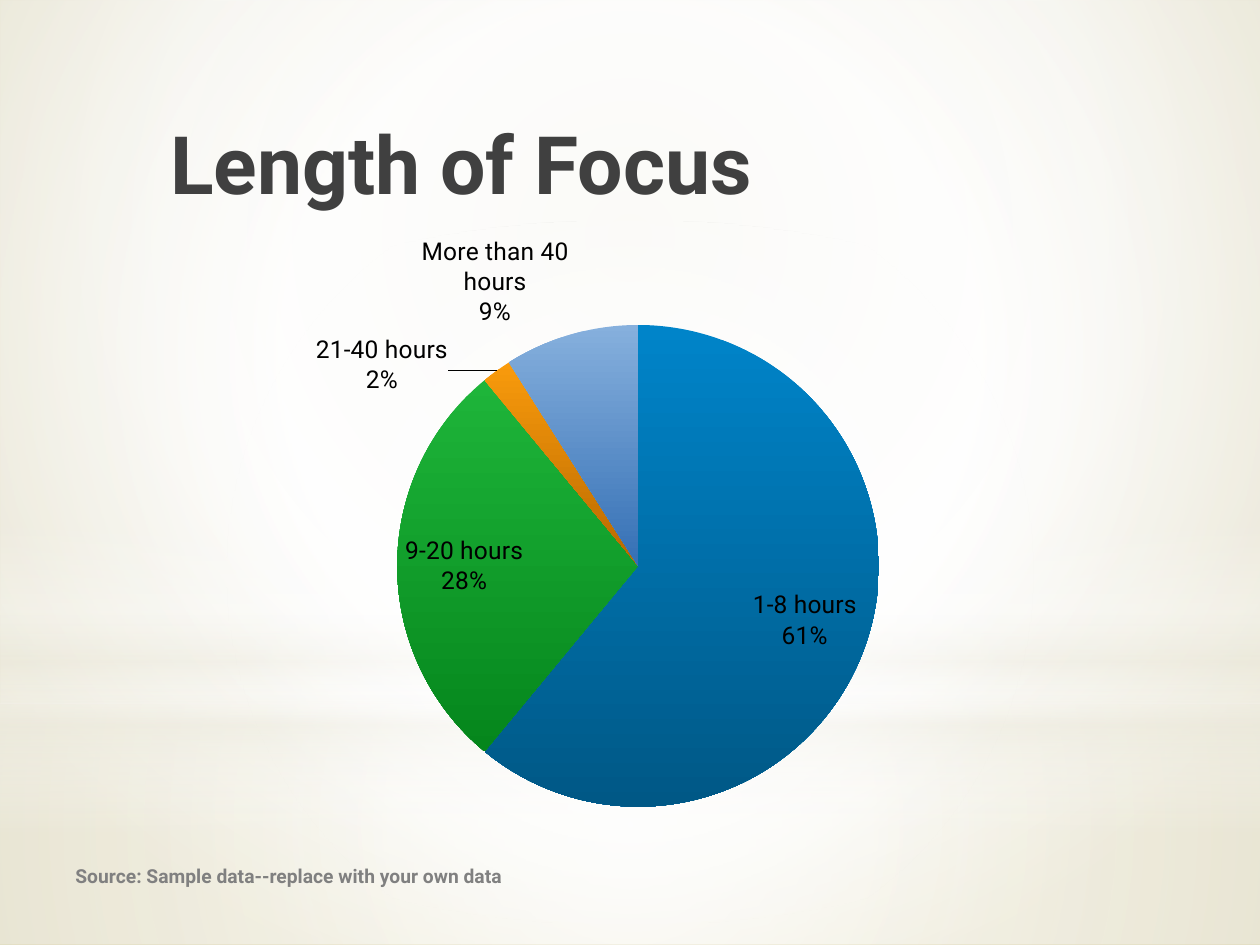
from lxml import etree
from pptx import Presentation
from pptx.chart.data import CategoryChartData
from pptx.dml.color import RGBColor
from pptx.enum.chart import XL_CHART_TYPE, XL_LABEL_POSITION
from pptx.enum.shapes import MSO_SHAPE
from pptx.enum.text import MSO_ANCHOR, PP_ALIGN
from pptx.oxml import parse_xml
from pptx.oxml.ns import nsdecls, qn
from pptx.util import Pt

PIE = XL_CHART_TYPE.PIE
BEST_FIT = XL_LABEL_POSITION.BEST_FIT
OUTSIDE_END = XL_LABEL_POSITION.OUTSIDE_END
RECTANGLE, OVAL = MSO_SHAPE.RECTANGLE, MSO_SHAPE.OVAL
TOP, MIDDLE, LEFT = MSO_ANCHOR.TOP, MSO_ANCHOR.MIDDLE, PP_ALIGN.LEFT

FONT = "Roboto"
BLACK = RGBColor(0x00, 0x00, 0x00)
CHARCOAL = RGBColor(0x40, 0x40, 0x40)
GRAY = RGBColor(0x80, 0x80, 0x80)
WHITE = RGBColor(0xFF, 0xFF, 0xFF)
CREAM = RGBColor(0xEE, 0xEC, 0xE1)
SAND = RGBColor(0xE7, 0xE4, 0xD4)
KHAKI = RGBColor(0xD5, 0xCC, 0x9F)

TITLE = "Length of Focus"
SOURCE = "Source: Sample data--replace with your own data"
SLICES = [
    ("1-8 hours", 61, RGBColor(0x00, 0x84, 0xC9), RGBColor(0x00, 0x58, 0x86)),
    ("9-20 hours", 28, RGBColor(0x1E, 0xB5, 0x3A), RGBColor(0x05, 0x86, 0x1C)),
    ("21-40 hours", 2, RGBColor(0xF9, 0x9B, 0x0C), RGBColor(0xB8, 0x68, 0x00)),
    ("More than 40 hours", 9, RGBColor(0x86, 0xB0, 0xDD), RGBColor(0x35, 0x70, 0xB5)),
]
MOVED_SLICE = 2
LABEL_SHIFT = {"x": -0.05, "y": 0.05}
PLOT_AREA = {"x": 0.27, "y": 0.18, "w": 0.55, "h": 0.79}

CENTER = (50, 50, 50, 50)
BACKDROP = ([(0, SAND, 100), (60, WHITE, 100), (100, KHAKI, 100)], (20, 10, 20, 60))
GLOWS = [
    (RECTANGLE, (0, 402, 720, 138),
     [(0, WHITE, 91), (37, WHITE, 76), (100, CREAM, 79)], CENTER),
    (RECTANGLE, (0, 0, 720, 402),
     [(0, WHITE, 83), (48, WHITE, 83), (100, CREAM, 83)], CENTER),
    (RECTANGLE, (0, 297, 720, 180),
     [(0, WHITE, 0), (29, WHITE, 30), (45, CREAM, 40),
      (55, WHITE, 26), (65, CREAM, 60), (100, WHITE, 0)], None),
    (OVAL, (0, 126, 720, 402), [(0, WHITE, 100), (56, WHITE, 0)], CENTER),
]
TITLE_BOX = (90, 58.5, 513, 90)
CHART_BOX = (90, 123, 504, 348.5)
SOURCE_BOX = (36, 486, 438, 29)


def points(box):
    return [Pt(length) for length in box]


def replace_with_gradient(properties, stops, focus):
    """Swap the empty fill for a radial gradient, or a vertical one without focus."""
    stop_xml = "".join(
        f'<a:gs pos="{position * 1000}"><a:srgbClr val="{color}">'
        f'<a:alpha val="{opacity * 1000}"/></a:srgbClr></a:gs>'
        for position, color, opacity in stops)
    if focus:
        edges = " ".join(f'{side}="{value * 1000}"' for side, value in zip("ltrb", focus))
        direction = f'<a:path path="circle"><a:fillToRect {edges}/></a:path>'
    else:
        direction = '<a:lin ang="5400000" scaled="0"/>'
    gradient = parse_xml(
        f'<a:gradFill {nsdecls("a")} rotWithShape="1">'
        f'<a:gsLst>{stop_xml}</a:gsLst>{direction}</a:gradFill>')
    properties.replace(properties.find(qn("a:noFill")), gradient)


def add_backdrop(slide):
    slide.background.fill.background()
    replace_with_gradient(next(slide.element.iter(qn("p:bgPr"))), *BACKDROP)
    for kind, box, stops, focus in GLOWS:
        shape = slide.shapes.add_shape(kind, *points(box))
        shape.shadow.inherit = False
        shape.line.fill.background()
        shape.fill.background()
        replace_with_gradient(shape.element.spPr, stops, focus)


def set_text(shape, text, size, color, anchor):
    frame = shape.text_frame
    frame.text = text
    frame.word_wrap = True
    frame.vertical_anchor = anchor
    paragraph = frame.paragraphs[0]
    paragraph.alignment = LEFT
    style_font(paragraph.runs[0].font, size, color, True)


def style_font(font, size, color, bold=False):
    font.name, font.size, font.bold = FONT, Pt(size), bold
    font.color.rgb = color


def manual_layout(values, inner=False):
    target = '<c:layoutTarget val="inner"/>' if inner else ""
    modes = '<c:xMode val="edge"/><c:yMode val="edge"/>' if inner else ""
    numbers = "".join(f'<c:{key} val="{value}"/>' for key, value in values.items())
    return parse_xml(f'<c:layout {nsdecls("c")}><c:manualLayout>'
                     f'{target}{modes}{numbers}</c:manualLayout></c:layout>')


def show_category_and_percent(labels):
    for name, value in (("showVal", "0"), ("showCatName", "1"), ("showPercent", "1"),
                        ("showLeaderLines", "1")):
        for flag in labels.findall(qn(f"c:{name}")):
            flag.set("val", value)
    separator = etree.Element(qn("c:separator"))
    separator.text = "\n"
    labels.find(qn("c:showBubbleSize")).addnext(separator)


def add_pie(slide):
    data = CategoryChartData()
    data.categories = [name for name, *_ in SLICES]
    data.add_series("Series 1", [value for _, value, *_ in SLICES])
    chart = slide.shapes.add_chart(PIE, *points(CHART_BOX), data).chart
    chart.has_title = chart.has_legend = False
    style_font(chart.font, 18, BLACK)
    chart.plots[0].vary_by_categories = True
    series = chart.plots[0].series[0]
    for index, (_, _, *colors) in enumerate(SLICES):
        fill = series.points[index].format.fill
        fill.gradient()
        fill.gradient_angle = 270
        for stop, color in zip(fill.gradient_stops, colors):
            stop.color.rgb = color

    labels = series.data_labels
    labels.position = BEST_FIT
    style_font(labels.font, 14, BLACK)
    moved_label = series.points[MOVED_SLICE].data_label
    moved_label.position = OUTSIDE_END
    style_font(moved_label.font, 14, BLACK)
    root = chart.element
    for tag in ("c:dLbls", "c:dLbl"):
        show_category_and_percent(next(root.iter(qn(tag))))
    next(root.iter(qn("c:dLbl"))).insert(1, manual_layout(LABEL_SHIFT))

    plot_area = next(root.iter(qn("c:plotArea")))
    for layout in plot_area.findall(qn("c:layout")):
        plot_area.remove(layout)
    plot_area.insert(0, manual_layout(PLOT_AREA, inner=True))


def main():
    presentation = Presentation()
    presentation.slide_width, presentation.slide_height = Pt(720), Pt(540)
    slide = presentation.slides.add_slide(presentation.slide_layouts[5])
    add_backdrop(slide)

    title = slide.shapes.title
    title.left, title.top, title.width, title.height = points(TITLE_BOX)
    set_text(title, TITLE, 46, CHARCOAL, TOP)
    title.text_frame.margin_top = Pt(6.5)
    slide.shapes.element.append(title.element)

    add_pie(slide)
    set_text(slide.shapes.add_textbox(*points(SOURCE_BOX)), SOURCE, 11, GRAY, MIDDLE)
    presentation.save("out.pptx")


if __name__ == "__main__":
    main()
